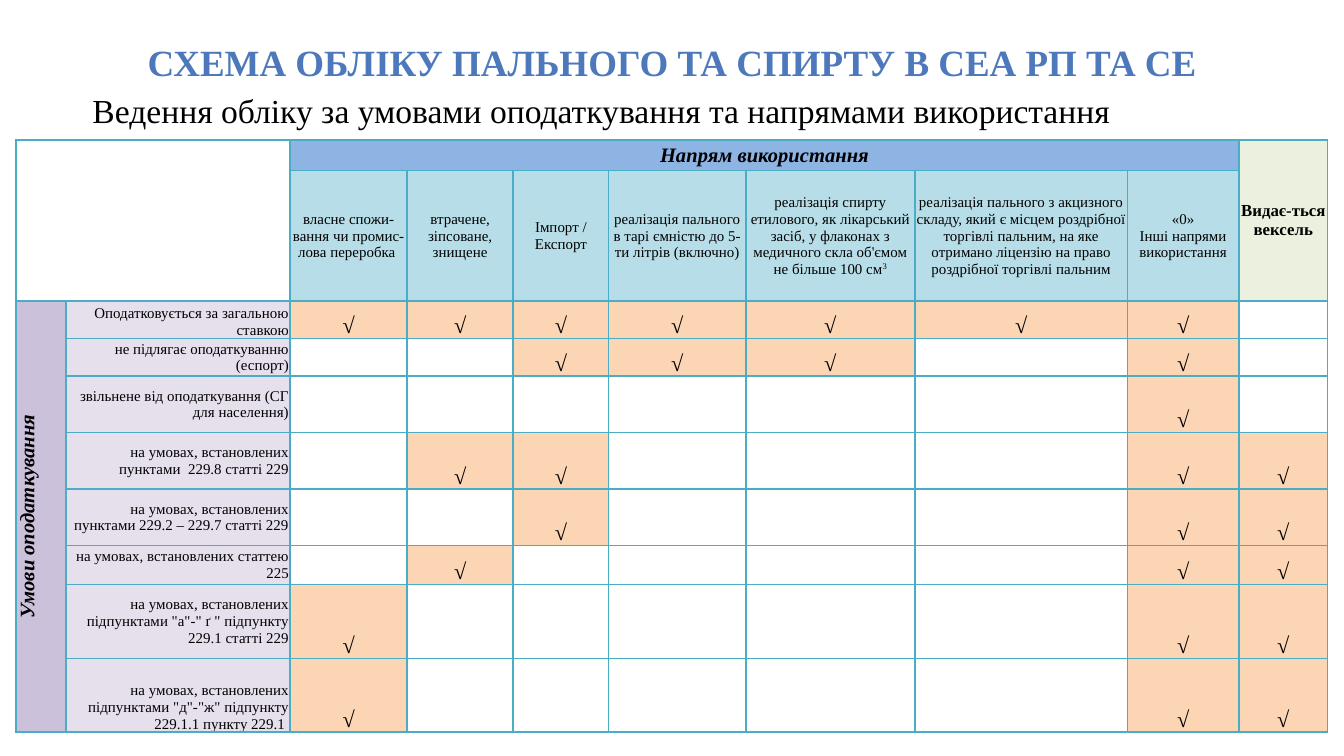
from lxml import etree
from pptx import Presentation
from pptx.dml.color import RGBColor
from pptx.enum.text import MSO_ANCHOR, PP_ALIGN
from pptx.oxml.ns import qn
from pptx.util import Inches, Pt

CENTER, RIGHT, LEFT = PP_ALIGN.CENTER, PP_ALIGN.RIGHT, PP_ALIGN.LEFT
MIDDLE, BOTTOM = MSO_ANCHOR.MIDDLE, MSO_ANCHOR.BOTTOM
FONT = "Times New Roman"
BLACK, BLUE, BORDER = "000000", "4D79BC", "4BACC6"

TITLE = "СХЕМА ОБЛІКУ ПАЛЬНОГО ТА СПИРТУ В СЕА РП ТА СЕ"
SUBTITLE = "Ведення обліку за умовами оподаткування та напрямами використання"
COL_WIDTHS = [0.37, 1.67, 0.87, 0.79, 0.71, 1.02, 1.26, 1.58, 0.83, 0.66]
ROW_HEIGHTS = [0.23, 0.97, 0.28, 0.28, 0.42, 0.42, 0.42, 0.29, 0.55, 0.55]
DIRECTIONS = [
    "власне спожи-вання чи промис-лова переробка ",
    "втрачене, зіпсоване, знищене",
    "Імпорт / Експорт",
    "реалізація пального в тарі ємністю до 5-ти літрів (включно)",
    "реалізація спирту етилового, як лікарський засіб, у флаконах з медичного скла об'ємом не більше 100 см",
    "реалізація пального з акцизного складу, який є місцем роздрібної торгівлі пальним, "
    "на яке отримано ліцензію на право роздрібної торгівлі пальним",
    "«0»\nІнші напрями використання",
]
CUBED_COL = 6
CONDITIONS = [
    ("Оподатковується за загальною ставкою", BOTTOM, "√√√√√√√-"),
    ("не підлягає оподаткуванню (еспорт)", MIDDLE, "--√√√-√-"),
    ("звільнене від оподаткування (СГ для населення)", MIDDLE, "------√-"),
    ("на умовах, встановлених пунктами  229.8 статті 229", MIDDLE, "-√√---√√"),
    ("на умовах, встановлених пунктами 229.2 – 229.7 статті 229", MIDDLE, "--√---√√"),
    ("на умовах, встановлених статтею 225", MIDDLE, "-√----√√"),
    ('на умовах, встановлених підпунктами "а"-" ґ " підпункту 229.1 статті 229', MIDDLE, "√-----√√"),
    ('на умовах, встановлених підпунктами "д"-"ж" підпункту 229.1.1 пункту 229.1 ', BOTTOM, "√-----√√"),
]


def rgb(color):
    return RGBColor.from_string(color)


def write(tf, text, size, color=BLACK, align=CENTER, bold=False, italic=False):
    tf.word_wrap = True
    tf.text = text
    for p in tf.paragraphs:
        p.alignment = align
        p.font.name, p.font.size = FONT, Pt(size)
        p.font.bold, p.font.italic = bold, italic
        p.font.color.rgb = rgb(color)


def prepare(cell):
    cell.margin_left = cell.margin_right = Inches(0.01)
    cell.margin_top = cell.margin_bottom = 0
    cell.fill.background()
    cell.text_frame.paragraphs[0]._p.get_or_add_endParaRPr().set("sz", "800")
    tcPr = cell._tc.get_or_add_tcPr()
    for i, side in enumerate(("lnL", "lnR", "lnT", "lnB")):
        ln = etree.Element(qn(f"a:{side}"), w=str(Pt(1)))
        fill = etree.SubElement(ln, qn("a:solidFill"))
        etree.SubElement(fill, qn("a:srgbClr"), val=BORDER)
        tcPr.insert(i, ln)


def put(cell, text, size, fill, anchor=MIDDLE, **style):
    write(cell.text_frame, text, size, **style)
    cell.vertical_anchor = anchor
    cell.fill.solid()
    cell.fill.fore_color.rgb = rgb(fill)


prs = Presentation()
prs.slide_width = Inches(10)
prs.slide_height = prs.slide_width * 9 // 16
s = prs.slides.add_slide(prs.slide_layouts[5])

title = s.shapes.title
title.left, title.top, title.width, title.height = map(Inches, (0.5, 0.23, 9, 0.46))
title.text_frame.vertical_anchor = MIDDLE
write(title.text_frame, TITLE, 19.8, BLUE, bold=True)

frame = s.shapes.add_table(len(ROW_HEIGHTS), len(COL_WIDTHS), Inches(0.12), Inches(1.04),
                           Inches(sum(COL_WIDTHS)), Inches(sum(ROW_HEIGHTS)))
table = frame.table
table.first_row = table.horz_banding = False
for column, width in zip(table.columns, COL_WIDTHS):
    column.width = Inches(width)
for row, height in zip(table.rows, ROW_HEIGHTS):
    row.height = Inches(height)
for cell in table.iter_cells():
    prepare(cell)
for first, last in (((0, 0), (1, 1)), ((0, 2), (0, 8)), ((0, 9), (1, 9)), ((2, 0), (9, 0))):
    table.cell(*first).merge(table.cell(*last))

put(table.cell(0, 2), "Напрям використання", 11, "8EB4E3", bold=True, italic=True)
put(table.cell(0, 9), "Видає-ться вексель", 9, "EBF1DE", bold=True)
put(table.cell(2, 0), "Умови оподаткування", 11, "CCC1DA", bold=True, italic=True)
table.cell(2, 0)._tc.get_or_add_tcPr().set("vert", "vert270")

for col, text in enumerate(DIRECTIONS, 2):
    put(table.cell(1, col), text, 8, "B7DEE8")
r = table.cell(1, CUBED_COL).text_frame.paragraphs[0].add_run()
r.text = "3"
r.font._element.set("baseline", "30000")

for row, (text, anchor, marks) in enumerate(CONDITIONS, 2):
    put(table.cell(row, 1), text, 8, "E6E0EC", anchor, align=RIGHT)
    for col, mark in enumerate(marks, 2):
        if mark == "√":
            put(table.cell(row, col), mark, 12, "FCD5B5", BOTTOM, bold=True)

box = s.shapes.add_textbox(Inches(0.59), Inches(0.62), Inches(8.5), Inches(0.4))
write(box.text_frame, SUBTITLE, 18, align=LEFT)

prs.save("out.pptx")
